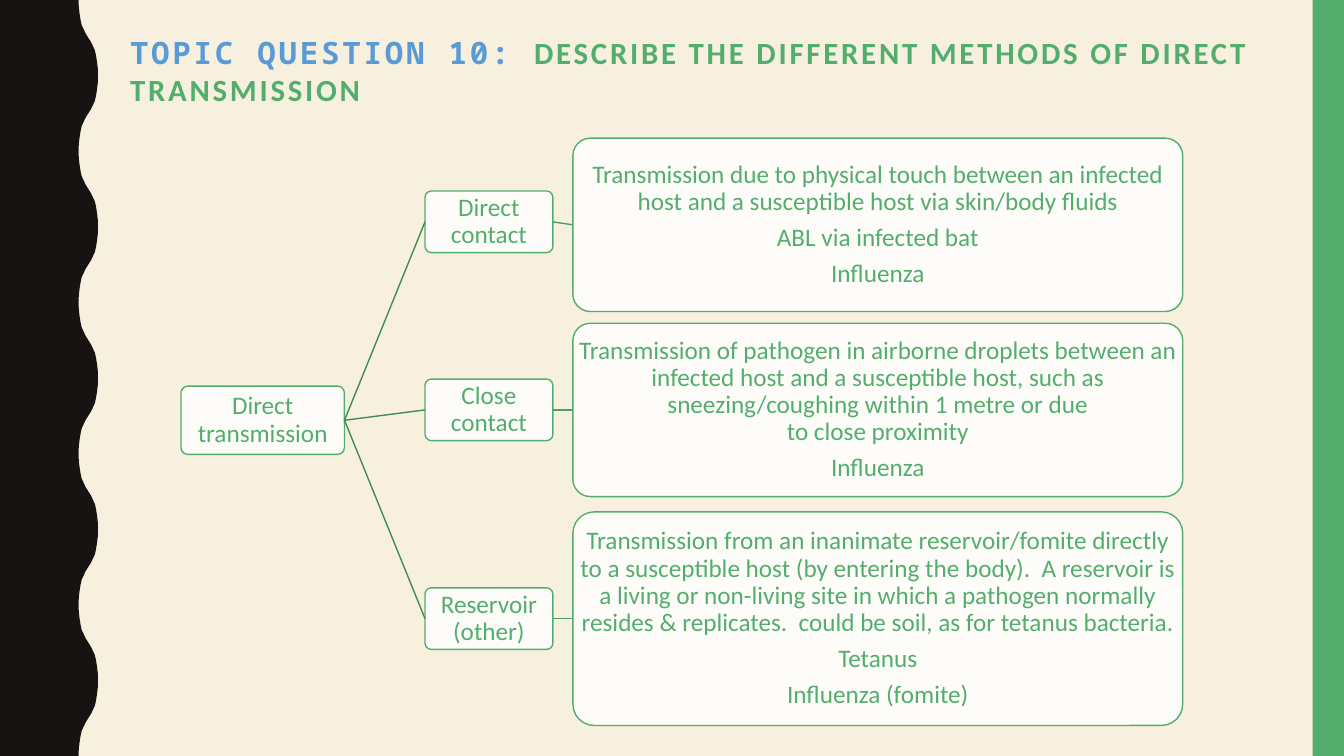
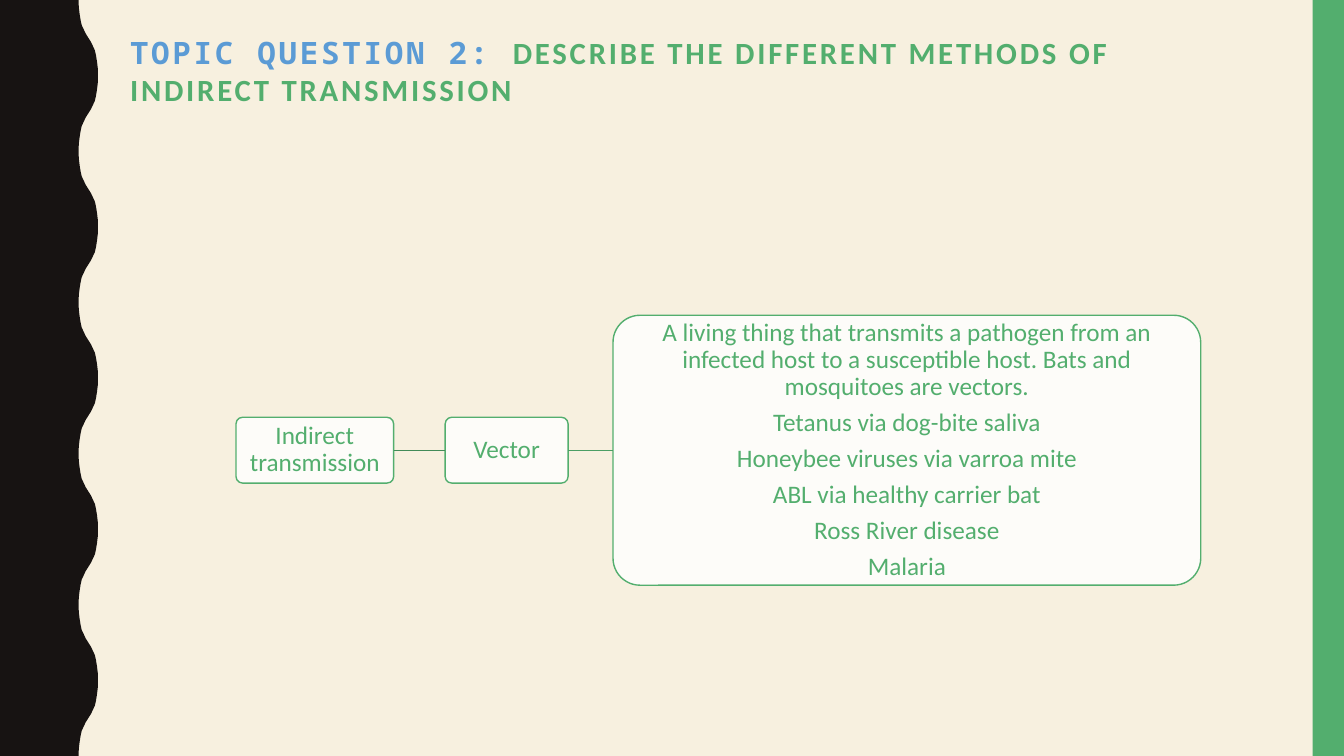
from dataclasses import dataclass
from typing import NamedTuple

from lxml.etree import SubElement
from pptx import Presentation
from pptx.dml.color import RGBColor
from pptx.enum.shapes import MSO_CONNECTOR, MSO_SHAPE
from pptx.enum.text import MSO_ANCHOR, PP_ALIGN
from pptx.oxml.ns import qn
from pptx.shapes.autoshape import Shape
from pptx.slide import Slide
from pptx.text.text import _Run as Run
from pptx.util import Pt


@dataclass(frozen=True)
class Theme:
    background: str = "F7F0DF"
    wave: str = "171312"
    accent: str = "53AE6E"
    question: str = "5B9BD5"
    node_fill: str = "FDFCF9"
    connectors: tuple[str, ...] = ("428B58", "4B9E64")
    body_font: str = "Calibri"
    question_font: str = "Noto Sans Mono"
    title_size: float = 22
    body_size: float = 18
    title_spacing: float = 2


class Column(NamedTuple):
    left: float
    width: float


class Node(NamedTuple):
    column: Column
    middle: float
    height: float
    paragraphs: tuple[str, ...]
    children: tuple["Node", ...] = ()


class Topic(NamedTuple):
    question: str
    title: str
    root: Node


THEME = Theme()
SLIDE_WIDTH, SLIDE_HEIGHT = 960, 540
BAND_WIDTH = 22.4
TITLE_BOX = (92.9, 24, 801.4, 90)

WAVE_LEFT, WAVE_RIGHT, HALF_WAVE = 56.2, 70, 54
HALF_WAVE_POINTS = (
    (56.2, 0), (56.3, 5), (56.9, 10), (57.6, 14.4), (58.4, 18), (59.8, 21),
    (61.2, 24), (63.1, 27), (65, 30), (66.4, 33), (67.8, 36), (68.6, 39.6),
    (69.3, 44), (69.9, 49),
)

DIRECT_ROOT, DIRECT_BRANCH, DIRECT_DETAIL = (
    Column(129.3, 116.8), Column(303.6, 91.3), Column(409.2, 435.6))
INDIRECT_ROOT, INDIRECT_BRANCH, INDIRECT_DETAIL = (
    Column(168.6, 112.6), Column(318, 87.8), Column(437.9, 419.8))
BRANCH_HEIGHT, INDIRECT_HEIGHT, INDIRECT_MIDDLE = 44, 47, 321.6


def direct_branch(name: str, middle: float, detail_middle: float,
                  detail_height: float, *details: str) -> Node:
    detail = Node(DIRECT_DETAIL, detail_middle, detail_height, details)
    return Node(DIRECT_BRANCH, middle, BRANCH_HEIGHT, (name,), (detail,))


TOPICS = (
    Topic(
        "TOPIC QUESTION 10: ",
        "DESCRIBE THE DIFFERENT METHODS OF DIRECT TRANSMISSION",
        Node(DIRECT_ROOT, 300.2, 48.8, ("Direct transmission",), (
            direct_branch(
                "Direct contact", 158.5, 160.6, 123.8,
                "Transmission due to physical touch between an infected host "
                "and a susceptible host via skin/body fluids",
                "ABL via infected bat",
                "Influenza"),
            direct_branch(
                "Close contact", 292.8, 292.8, 123.8,
                "Transmission of pathogen in airborne droplets between an "
                "infected host and a susceptible host, such as "
                "sneezing/coughing within 1 metre or due\nto close proximity",
                "Influenza"),
            direct_branch(
                "Reservoir (other)", 441.9, 441.9, 152.6,
                "Transmission from an inanimate reservoir/fomite directly to a "
                "susceptible host (by entering the body).  A reservoir is a "
                "living or non-living site in which a pathogen normally "
                "resides & replicates.  could be soil, as for tetanus bacteria.",
                "Tetanus",
                "Influenza (fomite)"),
        )),
    ),
    Topic(
        "TOPIC QUESTION 2: ",
        "DESCRIBE THE DIFFERENT METHODS OF INDIRECT TRANSMISSION",
        Node(INDIRECT_ROOT, INDIRECT_MIDDLE, INDIRECT_HEIGHT, ("Indirect transmission",), (
            Node(INDIRECT_BRANCH, INDIRECT_MIDDLE, INDIRECT_HEIGHT, ("Vector",), (
                Node(INDIRECT_DETAIL, INDIRECT_MIDDLE, 192.8, (
                    "A living thing that transmits a pathogen from an infected "
                    "host to a susceptible host. Bats and mosquitoes are vectors.",
                    "Tetanus via dog-bite saliva",
                    "Honeybee viruses via varroa mite",
                    "ABL via healthy carrier bat",
                    "Ross River disease",
                    "Malaria")),
            )),
        )),
    ),
)


def apply_format(target: object, values: dict[str, object]) -> None:
    for name, value in values.items():
        setattr(target, name, value)


def format_run(run: Run, font: str, size: float, color: str, bold: bool = False) -> None:
    apply_format(run.font, {"name": font, "size": Pt(size), "bold": bold})
    run.font.color.rgb = RGBColor.from_string(color)


def paint(shape: Shape, fill: str, line: str | None = None) -> None:
    shape.shadow.inherit = False
    shape.fill.solid()
    shape.fill.fore_color.rgb = RGBColor.from_string(fill)
    if line is None:
        shape.line.fill.background()
    else:
        shape.line.color.rgb = RGBColor.from_string(line)
        shape.line.width = Pt(1)


def add_side_bands(slide: Slide) -> None:
    """Draw the wavy left edge and the plain right band."""
    outline = []
    for index in range(SLIDE_HEIGHT // HALF_WAVE):
        for x, y in HALF_WAVE_POINTS:
            across = x if index % 2 == 0 else WAVE_LEFT + WAVE_RIGHT - x
            outline.append((Pt(across), Pt(index * HALF_WAVE + y)))
    outline += [(Pt(WAVE_LEFT), Pt(SLIDE_HEIGHT)), (0, Pt(SLIDE_HEIGHT))]
    builder = slide.shapes.build_freeform(0, 0)
    builder.add_line_segments(outline, close=True)
    paint(builder.convert_to_shape(), THEME.wave)

    band = slide.shapes.add_shape(
        MSO_SHAPE.RECTANGLE, Pt(SLIDE_WIDTH - BAND_WIDTH), 0,
        Pt(BAND_WIDTH), Pt(SLIDE_HEIGHT))
    paint(band, THEME.accent)


def add_title(slide: Slide, topic: Topic) -> None:
    title = slide.shapes.title
    names = ("left", "top", "width", "height")
    apply_format(title, dict(zip(names, map(Pt, TITLE_BOX))))
    frame = title.text_frame
    apply_format(frame, {
        "margin_left": 0, "margin_right": 0, "margin_top": 0, "margin_bottom": 0,
        "vertical_anchor": MSO_ANCHOR.TOP, "word_wrap": True})
    paragraph = frame.paragraphs[0]
    apply_format(paragraph, {"alignment": PP_ALIGN.LEFT, "line_spacing": 1.0})
    for text, font, color in (
            (topic.question, THEME.question_font, THEME.question),
            (topic.title, THEME.body_font, THEME.accent)):
        run = paragraph.add_run()
        run.text = text
        format_run(run, font, THEME.title_size, color, bold=True)
        run.font._element.set("spc", str(int(THEME.title_spacing * 100)))


def add_node(slide: Slide, node: Node) -> Shape:
    shape = slide.shapes.add_shape(
        MSO_SHAPE.ROUNDED_RECTANGLE, Pt(node.column.left),
        Pt(node.middle - node.height / 2), Pt(node.column.width), Pt(node.height))
    shape.adjustments[0] = 0.1
    paint(shape, THEME.node_fill, THEME.accent)
    frame = shape.text_frame
    margin = Pt(0.72)
    apply_format(frame, {
        "margin_left": margin, "margin_right": margin, "margin_top": margin,
        "margin_bottom": margin, "vertical_anchor": MSO_ANCHOR.MIDDLE,
        "word_wrap": True})
    for index, text in enumerate(node.paragraphs):
        paragraph = frame.add_paragraph() if index else frame.paragraphs[0]
        paragraph.text = text
        apply_format(paragraph, {
            "alignment": PP_ALIGN.CENTER, "line_spacing": 0.9,
            "space_after": Pt(0.35 * THEME.body_size)})
        for run in paragraph.runs:
            format_run(run, THEME.body_font, THEME.body_size, THEME.accent)
    return shape


def connect(slide: Slide, parent: Shape, child: Shape, color: str) -> None:
    """Join the right side of the parent to the left side of the child."""
    connector = slide.shapes.add_connector(MSO_CONNECTOR.STRAIGHT, 0, 0, 0, 0)
    connector.begin_connect(parent, 3)
    connector.end_connect(child, 1)
    connector.line.color.rgb = RGBColor.from_string(color)
    connector.line.width = Pt(1)
    SubElement(connector._element.spPr, qn("a:effectLst"))


def add_tree(slide: Slide, node: Node, depth: int = 0) -> Shape:
    shape = add_node(slide, node)
    for child in node.children:
        connect(slide, shape, add_tree(slide, child, depth + 1), THEME.connectors[depth])
    return shape


def main() -> None:
    presentation = Presentation()
    apply_format(presentation, {
        "slide_width": Pt(SLIDE_WIDTH), "slide_height": Pt(SLIDE_HEIGHT)})
    background = presentation.slide_master.background.fill
    background.solid()
    background.fore_color.rgb = RGBColor.from_string(THEME.background)
    title_only = presentation.slide_layouts.get_by_name("Title Only")
    for topic in TOPICS:
        slide = presentation.slides.add_slide(title_only)
        add_side_bands(slide)
        add_tree(slide, topic.root)
        add_title(slide, topic)
    presentation.save("out.pptx")


if __name__ == "__main__":
    main()
